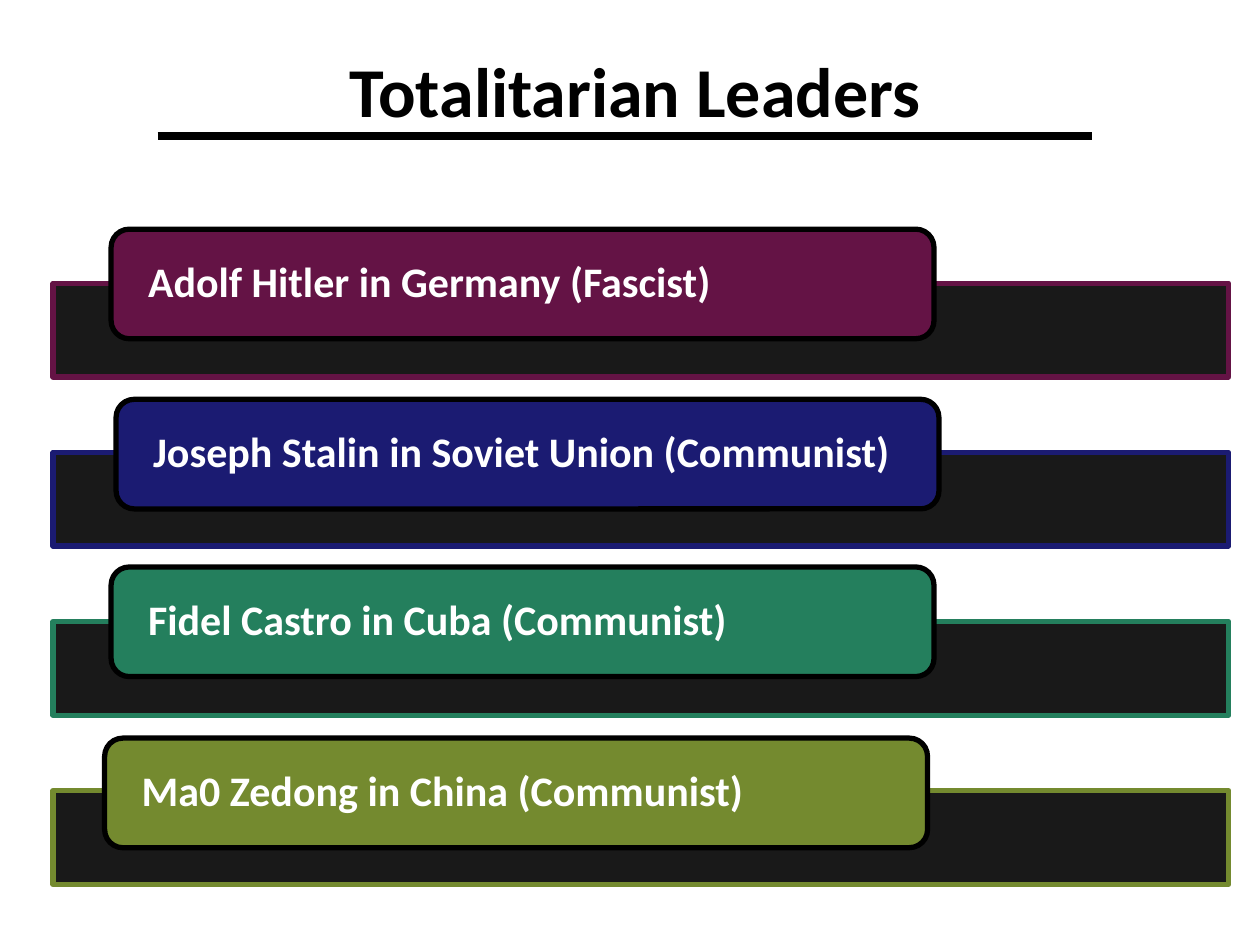
import pptx
import pptx.util
import pptx.dml.color
import pptx.enum.shapes
import pptx.enum.text
import pptx.oxml
import pptx.oxml.ns
import lxml.etree

Cm = pptx.util.Cm
Pt = pptx.util.Pt
SHAPES = pptx.enum.shapes.MSO_SHAPE

COLORS = {
    "black": "000000",
    "white": "FFFFFF",
    "plum": "641345",
    "navy": "1B1B72",
    "green": "247F5D",
    "olive": "748A2F",
}


def rgb(name):
    return pptx.dml.color.RGBColor.from_string(COLORS[name])


def add_block(kind, left, top, width, height, fill, outline):
    block = page.shapes.add_shape(kind, Cm(left), Cm(top), Cm(width), Cm(height))
    block.shadow.inherit = False
    block.fill.solid()
    block.fill.fore_color.rgb = rgb(fill)
    block.line.color.rgb = rgb(outline)
    block.line.width = Pt(3)
    return block


deck = pptx.Presentation()
deck.slide_width = Cm(25.4)
deck.slide_height = Cm(19.05)
page = deck.slides.add_slide(deck.slide_layouts[6])

# Leaders: text, colour, label left, label top
leaders = [
    ("Adolf Hitler in Germany (Fascist)", "plum", 2.24, 4.62),
    ("Joseph Stalin in Soviet Union (Communist)", "navy", 2.34, 8.05),
    ("Fidel Castro in Cuba (Communist)", "green", 2.24, 11.43),
    ("Ma0 Zedong in China (Communist)", "olive", 2.11, 14.88),
]
first_bar_top, bar_step = 5.71, 3.41

for index, (name, color, left, top) in enumerate(leaders):
    # Dark bar, 90 % opaque
    bar_top = first_bar_top + index * bar_step
    bar = add_block(SHAPES.RECTANGLE, 1.07, bar_top, 23.7, 1.89, "black", color)
    bar_color = bar.fill._xPr.find(".//" + pptx.oxml.ns.qn("a:srgbClr"))
    lxml.etree.SubElement(bar_color, pptx.oxml.ns.qn("a:alpha"), val="90000")

    # Rounded label
    label = add_block(SHAPES.ROUNDED_RECTANGLE, left, top, 16.59, 2.21, color, "black")
    frame = label.text_frame
    frame.text = name
    frame.word_wrap = True
    frame.vertical_anchor = pptx.enum.text.MSO_ANCHOR.MIDDLE
    frame.margin_left = frame.margin_right = Cm(0.64)
    frame.margin_top = frame.margin_bottom = 0
    para = frame.paragraphs[0]
    para.alignment = pptx.enum.text.PP_ALIGN.LEFT
    para.line_spacing = 0.9
    span = para.runs[0]
    span.font.name = "Calibri"
    span.font.size = Pt(24)
    span.font.bold = True
    span.font.color.rgb = rgb("white")

# Title
box = page.shapes.add_textbox(Cm(3.38), Cm(0.84), Cm(18.85), Cm(1.96))
box.text_frame.word_wrap = True
box.text_frame.text = "Totalitarian Leaders"
para = box.text_frame.paragraphs[0]
para.alignment = pptx.enum.text.PP_ALIGN.CENTER
span = para.runs[0]
span.font.name = "Calibri"
span.font.size = Pt(40)
span.font.bold = True
span.font.color.rgb = rgb("black")

# Rule under the title
rule = page.shapes.add_connector(
    pptx.enum.shapes.MSO_CONNECTOR.STRAIGHT, Cm(3.18), Cm(2.75), Cm(22.02), Cm(2.75)
)
rule.line.color.rgb = rgb("black")
rule.line.width = Pt(4.5)
lxml.etree.SubElement(rule._element.spPr, pptx.oxml.ns.qn("a:effectLst"))

deck.save("out.pptx")
